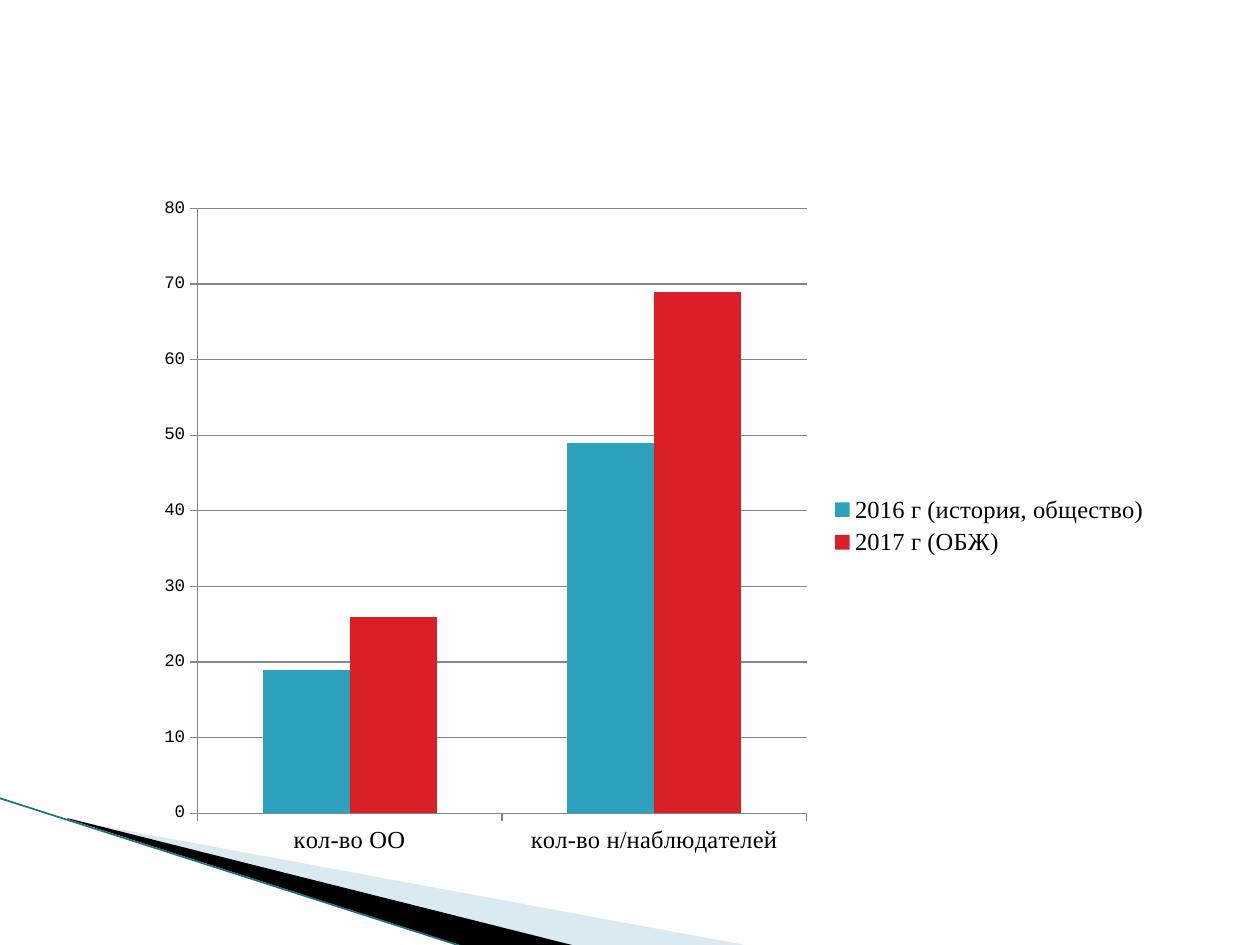
from lxml.etree import SubElement
from pptx import Presentation
from pptx.chart.data import CategoryChartData
from pptx.dml.color import RGBColor
from pptx.enum.chart import XL_CHART_TYPE, XL_LEGEND_POSITION, XL_TICK_MARK
from pptx.enum.shapes import MSO_CONNECTOR
from pptx.oxml.ns import qn
from pptx.util import Emu, Pt

TEAL = RGBColor(0x2D, 0xA2, 0xBF)
RED = RGBColor(0xDA, 0x1F, 0x28)
PALE_BLUE = RGBColor(0xA0, 0xCB, 0xDC)
DARK_TEAL = RGBColor(0x1B, 0x70, 0x86)
GRAY = RGBColor(0x86, 0x86, 0x86)
BLACK = RGBColor(0, 0, 0)

CATEGORIES = ["кол-во ОО", "кол-во н/наблюдателей"]
SERIES = [
    ("2016 г (история, общество)", (19, 49), TEAL),
    ("2017 г (ОБЖ)", (26, 69), RED),
]
WEDGES = [
    ([(69, 820), (750, 946), (575, 946), (69, 819)], PALE_BLUE, 40),
    ([(67, 818), (576, 946), (469, 948), (68, 819)], BLACK, 100),
]
EDGE = (-1, 798, 467, 948)
CHART_FRAME = (144, 185, 1018, 682)
SCALE = 914400 / 126


def px(length):
    return Emu(round(length * SCALE))


def add_wedge(page, points, color, opacity):
    builder = page.shapes.build_freeform(*points[0], scale=SCALE)
    builder.add_line_segments(points[1:], close=True)
    wedge = builder.convert_to_shape()
    wedge.shadow.inherit = False
    wedge.fill.solid()
    wedge.fill.fore_color.rgb = color
    wedge.line.fill.background()
    if opacity < 100:
        fill_color = wedge.element.spPr.find(qn("a:solidFill"))[0]
        SubElement(fill_color, qn("a:alpha"), val=str(opacity * 1000))


def add_edge(page):
    edge = page.shapes.add_connector(MSO_CONNECTOR.STRAIGHT, *map(px, EDGE))
    edge.line.color.rgb = DARK_TEAL
    edge.line.width = Pt(0.95)
    SubElement(edge.element.spPr, qn("a:effectLst"))


def set_font(font, name, size):
    font.name = name
    font.size = Pt(size)
    font.color.rgb = BLACK


def add_observer_chart(page):
    data = CategoryChartData()
    data.categories = CATEGORIES
    for name, values, color in SERIES:
        data.add_series(name, values)
    frame = page.shapes.add_chart(
        XL_CHART_TYPE.COLUMN_CLUSTERED, *map(px, CHART_FRAME), data)
    chart = frame.chart
    chart.has_title = False
    set_font(chart.font, "Courier New", 10)

    plot = chart.plots[0]
    plot.gap_width = 150
    plot.overlap = 0
    plot.vary_by_categories = False
    for series, (name, values, color) in zip(plot.series, SERIES):
        series.format.fill.solid()
        series.format.fill.fore_color.rgb = color

    chart.has_legend = True
    chart.legend.position = XL_LEGEND_POSITION.RIGHT
    chart.legend.include_in_layout = False
    set_font(chart.legend.font, "Times New Roman", 14)

    for axis in (chart.category_axis, chart.value_axis):
        axis.major_tick_mark = XL_TICK_MARK.OUTSIDE
        axis.minor_tick_mark = XL_TICK_MARK.NONE
        axis.format.line.color.rgb = GRAY
    set_font(chart.category_axis.tick_labels.font, "Times New Roman", 14)
    values_axis = chart.value_axis
    values_axis.minimum_scale = 0
    values_axis.maximum_scale = 80
    values_axis.major_unit = 10
    values_axis.has_major_gridlines = True
    values_axis.major_gridlines.format.line.color.rgb = GRAY


def main():
    deck = Presentation()
    deck.slide_width, deck.slide_height = px(1260), px(945)
    page = deck.slides.add_slide(deck.slide_layouts[6])
    for points, color, opacity in WEDGES:
        add_wedge(page, points, color, opacity)
    add_edge(page)
    add_observer_chart(page)
    deck.save("out.pptx")


if __name__ == "__main__":
    main()
